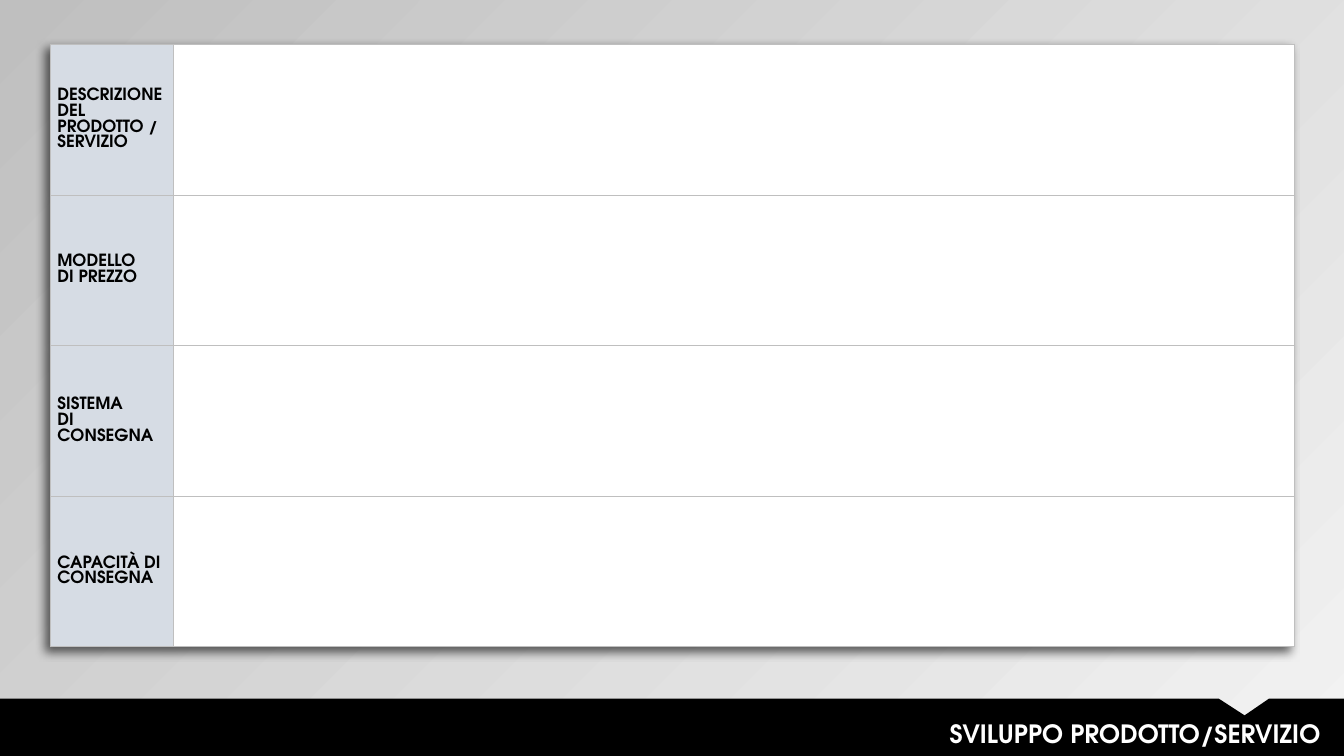
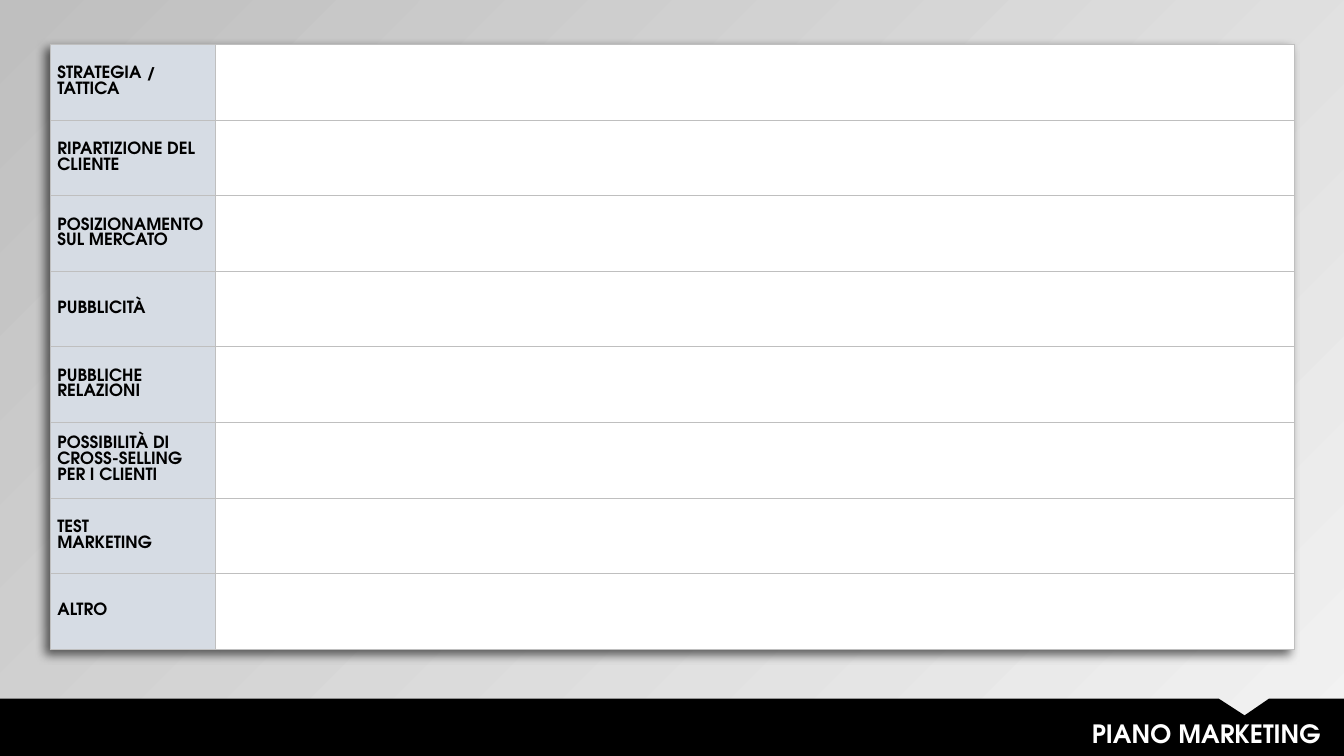
from dataclasses import dataclass

from lxml.etree import SubElement
from pptx import Presentation
from pptx.dml.color import RGBColor
from pptx.enum.text import MSO_ANCHOR, MSO_AUTO_SIZE, PP_ALIGN
from pptx.oxml import parse_xml
from pptx.oxml.ns import nsdecls, qn
from pptx.slide import Slide
from pptx.table import _Cell as Cell
from pptx.text.text import _Paragraph as Paragraph
from pptx.util import Pt


@dataclass(frozen=True)
class Theme:
    font: str = "TeX Gyre Adventor"
    title_size: float = 18
    label_size: float = 12
    label_spacing: float = 11.2
    black: str = "000000"
    white: str = "FFFFFF"
    label_fill: str = "D6DCE4"
    border: str = "BFBFBF"
    border_width: float = 0.5
    gradient: tuple[str, str] = ("F2F2F2", "BFBFBF")


@dataclass(frozen=True)
class PlanSlide:
    title: str
    label_width: float
    row_height: float
    labels: tuple[str, ...]


THEME = Theme()
SLIDE_WIDTH, SLIDE_HEIGHT = 960, 540
TABLE_LEFT, TABLE_TOP, TABLE_WIDTH = 36, 31.6, 888.5
BAND_TOP = 499
NOTCH = ((870.5, BAND_TOP), (889, 511), (906.5, BAND_TOP))

PLAN_SLIDES = (
    PlanSlide(
        "SVILUPPO PRODOTTO/SERVIZIO", 88, 107.6,
        (
            "DESCRIZIONE DEL PRODOTTO / SERVIZIO",
            "MODELLO\vDI PREZZO",
            "SISTEMA\vDI CONSEGNA",
            "CAPACITÀ DI CONSEGNA",
        ),
    ),
    PlanSlide(
        "PIANO MARKETING", 117.6, 54,
        (
            "STRATEGIA / TATTICA",
            "RIPARTIZIONE DEL CLIENTE",
            "POSIZIONAMENTO SUL MERCATO",
            "PUBBLICITÀ",
            "PUBBLICHE\vRELAZIONI",
            "POSSIBILITÀ DI CROSS-SELLING PER I CLIENTI",
            "TEST\vMARKETING",
            "ALTRO",
        ),
    ),
)


def rgb(color: str) -> RGBColor:
    return RGBColor.from_string(color)


def set_text(paragraph: Paragraph, text: str, size: float, color: str) -> None:
    paragraph.text = text
    paragraph.font.name = THEME.font
    paragraph.font.size = Pt(size)
    paragraph.font.bold = True
    paragraph.font.color.rgb = rgb(color)


def paint_background(slide: Slide) -> None:
    fill = slide.background.fill
    fill.gradient()
    fill.gradient_angle = 135
    for stop, color, position in zip(fill.gradient_stops, THEME.gradient, (0, 1)):
        stop.color.rgb = rgb(color)
        stop.position = position


def style_cell(cell: Cell, color: str) -> None:
    properties = cell._tc.get_or_add_tcPr()
    for side in ("lnL", "lnR", "lnT", "lnB"):
        line = SubElement(properties, qn(f"a:{side}"), w=str(Pt(THEME.border_width)))
        SubElement(SubElement(line, qn("a:solidFill")), qn("a:srgbClr"), val=THEME.border)
    cell.fill.solid()
    cell.fill.fore_color.rgb = rgb(color)
    cell.vertical_anchor = MSO_ANCHOR.MIDDLE
    cell.margin_left = cell.margin_right = Pt(5)
    cell.margin_top = cell.margin_bottom = 0


def add_plan_table(slide: Slide, plan: PlanSlide) -> None:
    count = len(plan.labels)
    table = slide.shapes.add_table(
        count, 2, Pt(TABLE_LEFT), Pt(TABLE_TOP),
        Pt(TABLE_WIDTH), Pt(plan.row_height * count),
    ).table
    table.first_row = table.horz_banding = False
    table._tbl.tblPr.insert(0, parse_xml(
        f'<a:effectLst {nsdecls("a")}>'
        f'<a:outerShdw blurRad="{Pt(7)}" dist="{Pt(5)}" dir="8100000" algn="tr" rotWithShape="0">'
        f'<a:srgbClr val="{THEME.black}"><a:alpha val="60000"/></a:srgbClr>'
        '</a:outerShdw></a:effectLst>'
    ))
    table.columns[0].width = Pt(plan.label_width)
    table.columns[1].width = Pt(TABLE_WIDTH - plan.label_width)
    for index, label in enumerate(plan.labels):
        table.rows[index].height = Pt(plan.row_height)
        label_cell = table.cell(index, 0)
        style_cell(label_cell, THEME.label_fill)
        style_cell(table.cell(index, 1), THEME.white)
        paragraph = label_cell.text_frame.paragraphs[0]
        set_text(paragraph, label, THEME.label_size, THEME.black)
        paragraph.line_spacing = Pt(THEME.label_spacing)


def add_title_band(slide: Slide, title: str) -> None:
    outline = (
        *NOTCH,
        (SLIDE_WIDTH, BAND_TOP),
        (SLIDE_WIDTH, SLIDE_HEIGHT),
        (0, SLIDE_HEIGHT),
    )
    builder = slide.shapes.build_freeform(0, Pt(BAND_TOP))
    builder.add_line_segments([(Pt(x), Pt(y)) for x, y in outline], close=True)
    band = builder.convert_to_shape()
    band.shadow.inherit = False
    band.fill.solid()
    band.fill.fore_color.rgb = rgb(THEME.black)
    band.line.fill.background()

    frame = slide.shapes.add_textbox(Pt(298), Pt(509.8), Pt(652.4), Pt(29)).text_frame
    frame.word_wrap = True
    frame.auto_size = MSO_AUTO_SIZE.SHAPE_TO_FIT_TEXT
    paragraph = frame.paragraphs[0]
    set_text(paragraph, title, THEME.title_size, THEME.white)
    paragraph.alignment = PP_ALIGN.RIGHT


def main() -> None:
    presentation = Presentation()
    presentation.slide_width = Pt(SLIDE_WIDTH)
    presentation.slide_height = Pt(SLIDE_HEIGHT)
    for plan in PLAN_SLIDES:
        slide = presentation.slides.add_slide(presentation.slide_layouts[6])
        paint_background(slide)
        add_plan_table(slide, plan)
        add_title_band(slide, plan.title)
    presentation.save("out.pptx")


if __name__ == "__main__":
    main()
